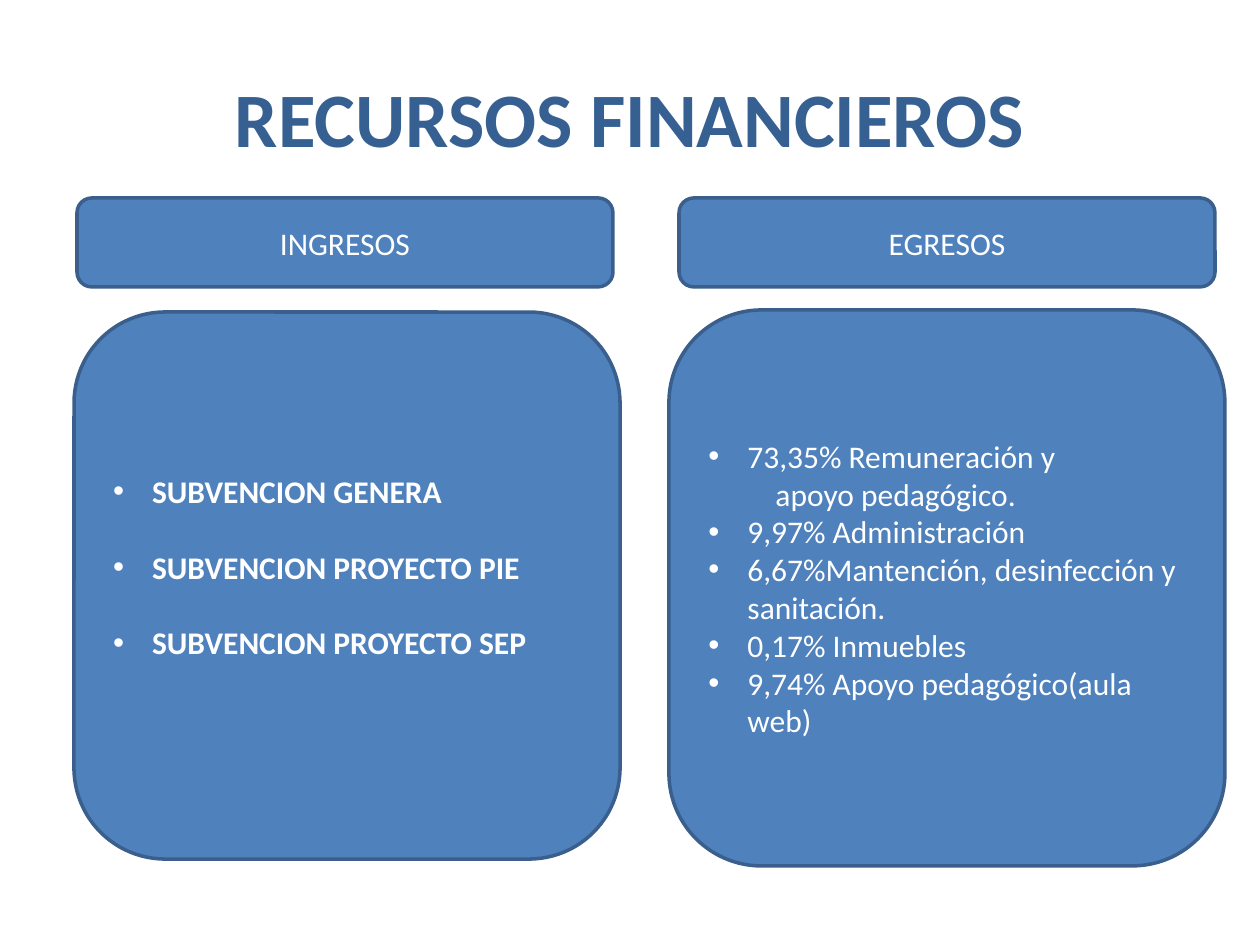
from dataclasses import dataclass

from lxml.etree import SubElement
from pptx import Presentation
from pptx.dml.color import RGBColor
from pptx.enum.shapes import MSO_SHAPE
from pptx.enum.text import MSO_ANCHOR, PP_ALIGN
from pptx.oxml.ns import qn
from pptx.util import Pt

EMU_PER_PX = 914400 / 126


@dataclass(frozen=True)
class Theme:
    font: str = "Calibri"
    title_color: RGBColor = RGBColor(0x37, 0x60, 0x92)
    fill: RGBColor = RGBColor(0x4F, 0x81, 0xBD)
    line: RGBColor = RGBColor(0x3A, 0x5F, 0x8C)
    text: RGBColor = RGBColor(0xFF, 0xFF, 0xFF)
    title_size: int = 44
    body_size: int = 18
    line_width: int = 2


@dataclass(frozen=True)
class Box:
    left: int
    top: int
    width: int
    height: int


@dataclass(frozen=True)
class Item:
    text: str
    bullet: bool = True
    extra_indent: int = 0


THEME = Theme()
BULLET_INDENT = 39


def px(value):
    return round(value * EMU_PER_PX)


def place(shape, box):
    shape.left, shape.top = px(box.left), px(box.top)
    shape.width, shape.height = px(box.width), px(box.height)


def add_span(para, text, size, color, bold=False):
    span = para.add_run()
    span.text = text
    span.font.name = THEME.font
    span.font.size = Pt(size)
    span.font.bold = bold
    span.font.color.rgb = color


def add_title(page, box, text):
    title = page.shapes.title
    place(title, box)
    title.text_frame.vertical_anchor = MSO_ANCHOR.MIDDLE
    para = title.text_frame.paragraphs[0]
    para.alignment = PP_ALIGN.CENTER
    add_span(para, text, THEME.title_size, THEME.title_color, bold=True)


def add_rounded_box(page, box):
    shape = page.shapes.add_shape(
        MSO_SHAPE.ROUNDED_RECTANGLE,
        px(box.left), px(box.top), px(box.width), px(box.height),
    )
    shape.shadow.inherit = False
    shape.fill.solid()
    shape.fill.fore_color.rgb = THEME.fill
    shape.line.color.rgb = THEME.line
    shape.line.width = Pt(THEME.line_width)
    shape.text_frame.word_wrap = True
    shape.text_frame.vertical_anchor = MSO_ANCHOR.MIDDLE
    return shape.text_frame


def add_header(page, box, text):
    para = add_rounded_box(page, box).paragraphs[0]
    para.alignment = PP_ALIGN.CENTER
    add_span(para, text, THEME.body_size, THEME.text)


def format_item(para, item):
    para.alignment = PP_ALIGN.LEFT
    properties = para._p.get_or_add_pPr()
    properties.set("marL", str(px(BULLET_INDENT + item.extra_indent)))
    if item.bullet:
        properties.set("indent", str(-px(BULLET_INDENT)))
        SubElement(properties, qn("a:buFont")).set("typeface", "Arial")
        SubElement(properties, qn("a:buChar")).set("char", "•")
    else:
        properties.set("indent", "0")
        SubElement(properties, qn("a:buNone"))


def add_list_panel(page, box, items, bold=False, gap=0):
    frame = add_rounded_box(page, box)
    frame.margin_bottom += px(gap)
    for index, item in enumerate(items):
        para = frame.add_paragraph() if index else frame.paragraphs[0]
        if index and gap:
            para.space_before = px(gap)
        format_item(para, item)
        add_span(para, item.text, THEME.body_size, THEME.text, bold)


def build_resources_slide(deck):
    page = deck.slides.add_slide(deck.slide_layouts[5])
    add_title(page, Box(63, 38, 1134, 158), "RECURSOS FINANCIEROS")
    add_list_panel(page, Box(669, 310, 556, 556), [
        Item("73,35% Remuneración y"),
        Item("apoyo pedagógico.", bullet=False, extra_indent=28),
        Item("9,97% Administración"),
        Item("6,67%Mantención, desinfección y sanitación."),
        Item("0,17% Inmuebles"),
        Item("9,74% Apoyo pedagógico(aula web)"),
    ])
    add_header(page, Box(679, 198, 536, 89), "EGRESOS")
    add_list_panel(page, Box(74, 312, 546, 547), [
        Item("SUBVENCION GENERA"),
        Item("SUBVENCION PROYECTO PIE"),
        Item("SUBVENCION PROYECTO SEP"),
    ], bold=True, gap=38)
    add_header(page, Box(77, 198, 536, 89), "INGRESOS")


def main():
    deck = Presentation()
    deck.slide_width, deck.slide_height = px(1260), px(945)
    build_resources_slide(deck)
    deck.save("out.pptx")


if __name__ == "__main__":
    main()
